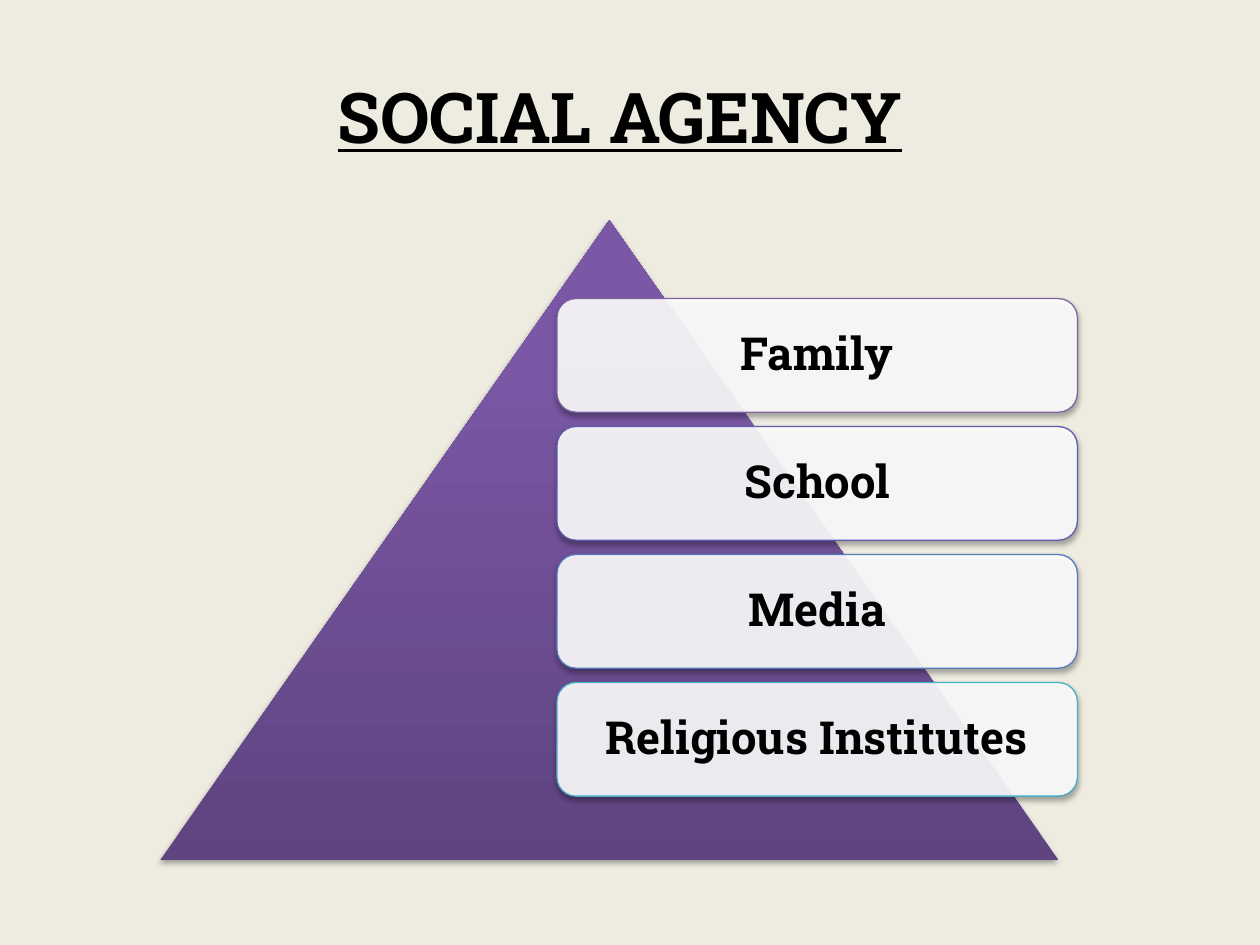
import copy

import lxml.etree
import pptx
import pptx.dml.color
import pptx.enum.shapes
import pptx.enum.text
import pptx.oxml
import pptx.oxml.ns
import pptx.util

Cm = pptx.util.Cm
Pt = pptx.util.Pt
SHAPES = pptx.enum.shapes.MSO_SHAPE
FONT = "Roboto Slab"
AGENCIES = [
    ("Family", "8064A2"),
    ("School", "5F5BAE"),
    ("Media", "537ABA"),
    ("Religious Institutes", "4BACC6"),
]
CARD_TOP = 6.02
CARD_PITCH = 2.58


def paint(color_format, color):
    color_format.rgb = pptx.dml.color.RGBColor.from_string(color)


def add_shadow(shape):
    shape.shadow.inherit = False
    effects = shape._element.spPr.find(pptx.oxml.ns.qn("a:effectLst"))
    effects.append(pptx.oxml.parse_xml(
        f'<a:outerShdw {pptx.oxml.ns.nsdecls("a")} blurRad="{Pt(3.1)}" dist="{Pt(1.8)}" '
        'dir="5400000" rotWithShape="0"><a:srgbClr val="000000">'
        '<a:alpha val="35000"/></a:srgbClr></a:outerShdw>'
    ))


def write_label(shape, text, size):
    frame = shape.text_frame
    frame.word_wrap = True
    frame.vertical_anchor = pptx.enum.text.MSO_ANCHOR.MIDDLE
    label = frame.paragraphs[0]
    label.text = text
    label.alignment = pptx.enum.text.PP_ALIGN.CENTER
    label.font.name = FONT
    label.font.size = Pt(size)
    label.font.bold = True
    paint(label.font.color, "000000")
    return label


def add_title(slide):
    title = slide.shapes.add_textbox(Cm(1.7), Cm(1.27), Cm(21.59), Cm(2.11))
    write_label(title, "SOCIAL AGENCY", 40).font.underline = True


def add_pyramid(slide):
    pyramid = slide.shapes.add_shape(
        SHAPES.ISOSCELES_TRIANGLE, Cm(3.23), Cm(4.44), Cm(18.11), Cm(12.9))
    pyramid.line.fill.background()
    pyramid.fill.gradient()
    pyramid.fill.gradient_angle = 90
    stops = pyramid._element.spPr.find(".//" + pptx.oxml.ns.qn("a:gsLst"))
    stops.append(copy.deepcopy(stops[-1]))
    shades = [(0, "5F4480"), (0.8, "7B58A6"), (1, "7C57A8")]
    for stop, (position, color) in zip(pyramid.fill.gradient_stops, shades):
        stop.position = position
        paint(stop.color, color)
    add_shadow(pyramid)


def add_card(slide, top, agency, outline):
    card = slide.shapes.add_shape(
        SHAPES.ROUNDED_RECTANGLE, Cm(11.23), Cm(top), Cm(10.49), Cm(2.29))
    card.fill.solid()
    paint(card.fill.fore_color, "FFFFFF")
    white = card._element.spPr.find(
        pptx.oxml.ns.qn("a:solidFill") + "/" + pptx.oxml.ns.qn("a:srgbClr"))
    lxml.etree.SubElement(white, pptx.oxml.ns.qn("a:alpha"), val="90000")
    paint(card.line.color, outline)
    card.line.width = Pt(0.75)
    add_shadow(card)
    frame = card.text_frame
    frame.margin_left = frame.margin_right = Cm(0.28)
    frame.margin_top = frame.margin_bottom = Cm(0.28)
    write_label(card, agency, 26).line_spacing = 0.9


def main():
    presentation = pptx.Presentation()
    presentation.slide_width = Cm(25.4)
    presentation.slide_height = Cm(19.05)
    slide = presentation.slides.add_slide(presentation.slide_layouts[6])
    slide.background.fill.solid()
    paint(slide.background.fill.fore_color, "EEECE1")
    add_title(slide)
    add_pyramid(slide)
    for row, (agency, outline) in enumerate(AGENCIES):
        add_card(slide, CARD_TOP + row * CARD_PITCH, agency, outline)
    presentation.save("out.pptx")


if __name__ == "__main__":
    main()
